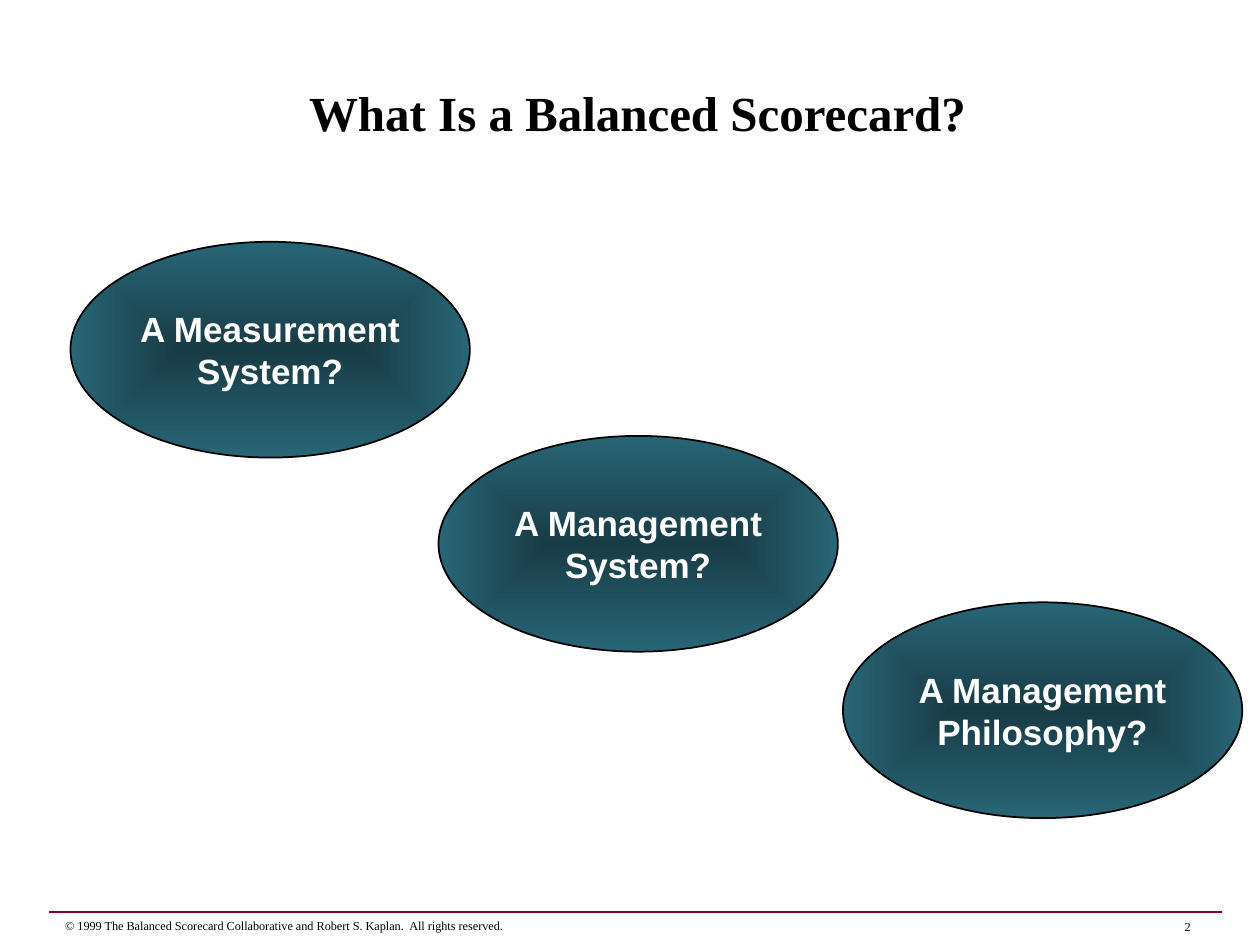
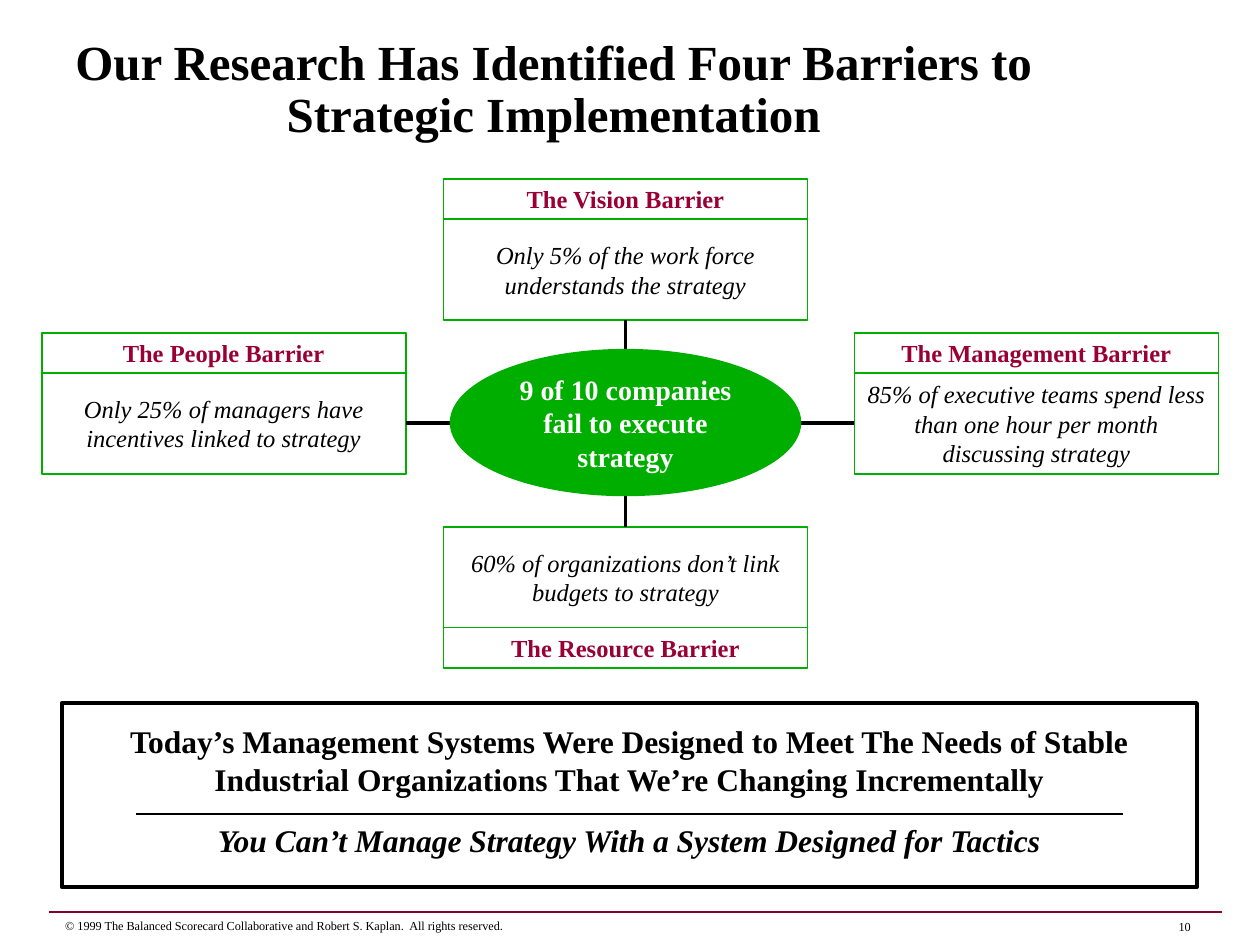
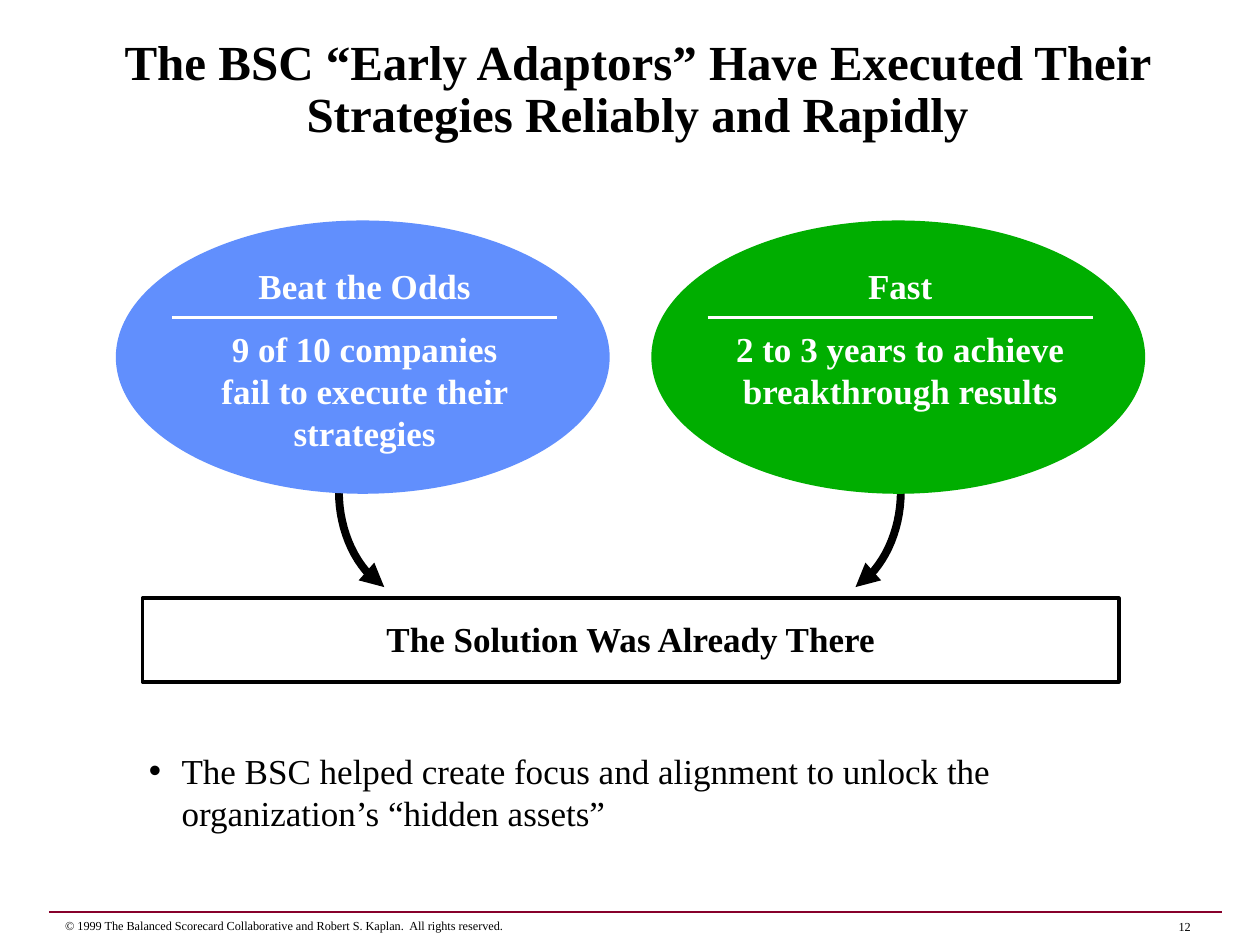
"""Build three Balanced Scorecard slides with a shared title style and footer."""
from lxml import etree
from pptx import Presentation
from pptx.dml.color import RGBColor
from pptx.enum.shapes import MSO_CONNECTOR, MSO_SHAPE
from pptx.enum.text import MSO_ANCHOR, MSO_AUTO_SIZE, PP_ALIGN
from pptx.oxml.ns import qn
from pptx.util import Pt

BLACK = RGBColor(0x00, 0x00, 0x00)
WHITE = RGBColor(0xFF, 0xFF, 0xFF)
GREEN = RGBColor(0x00, 0xAE, 0x00)
BLUE = RGBColor(0x61, 0x8F, 0xFD)
CRIMSON = RGBColor(0x99, 0x00, 0x33)
WINE = RGBColor(0x87, 0x00, 0x2B)
TEAL = RGBColor(0x28, 0x66, 0x76)
DARK_TEAL = RGBColor(0x18, 0x3C, 0x46)

SERIF, SANS = "Times New Roman", "Arial"
OVAL, RECTANGLE = MSO_SHAPE.OVAL, MSO_SHAPE.RECTANGLE
STRAIGHT = MSO_CONNECTOR.STRAIGHT
TOP, MIDDLE, BOTTOM = MSO_ANCHOR.TOP, MSO_ANCHOR.MIDDLE, MSO_ANCHOR.BOTTOM
LEFT, CENTER, RIGHT = PP_ALIGN.LEFT, PP_ALIGN.CENTER, PP_ALIGN.RIGHT
NO_FIT = MSO_AUTO_SIZE.NONE
TOP_SIDE, LEFT_SIDE, BOTTOM_SIDE, RIGHT_SIDE = range(4)
CONTENT_LAYOUT, TITLE_LAYOUT = 1, 5

COPYRIGHT = ("© 1999 The Balanced Scorecard Collaborative and Robert S. Kaplan.  "
             "All rights reserved.")
DEFAULT_INSETS = (7.2, 3.6, 7.2, 3.6)
PANEL_INSETS = (14.4, 10.8, 14.4, 10.8)

FOOTER = dict(name=SERIF, size=Pt(7), color=BLACK)
TITLE = dict(name=SERIF, size=Pt(28), bold=True, color=BLACK)
QUESTION = dict(name=SANS, size=Pt(20), bold=True, color=WHITE)
BARRIER = dict(name=SERIF, size=Pt(14), bold=True, color=CRIMSON)
FINDING = dict(name=SERIF, size=Pt(14), italic=True, color=BLACK)
HUB = dict(name=SERIF, size=Pt(16), bold=True, color=WHITE)
CONCLUSION = dict(name=SERIF, size=Pt(18), bold=True, color=BLACK)
RESULT = dict(name=SERIF, size=Pt(20), bold=True, color=WHITE)
SOLUTION = dict(name=SERIF, size=Pt(20), bold=True, color=BLACK)
BULLET = dict(name=SERIF, size=Pt(20), bold=False, color=BLACK)

QUESTIONS = [
    ("A Measurement System?", 40.3, 138.2),
    ("A Management System?", 250.6, 249.1),
    ("A Management Philosophy?", 481.7, 344.2),
]
QUESTION_SIZE = (228.2, 123.3)

FINDING_SIZE, BARRIER_HEIGHT = (208.1, 57.6), 23
BARRIERS = {
    "vision": ("The Vision Barrier",
               "Only 5% of the work force understands the strategy", 253.4, 125.3, -BARRIER_HEIGHT),
    "resource": ("The Resource Barrier",
                 "60% of organizations don’t link budgets to strategy", 253.4, 301, FINDING_SIZE[1]),
    "people": ("The People Barrier",
               "Only 25% of managers have incentives linked to strategy", 23.8, 213.1, -BARRIER_HEIGHT),
    "management": ("The Management Barrier",
                   "85% of executive teams spend less than one hour per month discussing strategy",
                   488.2, 213.1, -BARRIER_HEIGHT),
}
SPOKES = [("vision", BOTTOM_SIDE, "resource", TOP_SIDE),
          ("people", RIGHT_SIDE, "management", LEFT_SIDE)]
CONCLUSIONS = [
    ("Today’s Management Systems Were Designed to Meet The Needs of Stable "
     "Industrial Organizations That We’re Changing Incrementally", CONCLUSION),
    ("You Can’t Manage Strategy With a System Designed for Tactics",
     CONCLUSION | dict(italic=True)),
]

RESULTS = [
    ("Beat the Odds", "9 of 10 companies fail to execute their strategies", BLUE, 198),
    ("Fast", "2 to 3 years to achieve breakthrough results", GREEN, 218.2),
]
RESULT_CENTER, RESULT_STEP = 208.4, 306
ARROWS = [(193.7, 1), (514.8, -1)]
ARROW_CURVE = [(0, 280.8), (0, 303.8), (10.1, 325.4), (25.9, 335.5)]
CURVE_STEPS = 16


def points(*values):
    """Turn numbers into point lengths."""
    return [Pt(value) for value in values]


def write(shape, lines, anchor=MIDDLE, align=CENTER, insets=DEFAULT_INSETS,
          wrap=True, gap=0, spacing=None):
    """Fill a shape with formatted paragraphs."""
    frame = shape.text_frame
    frame.auto_size, frame.word_wrap, frame.vertical_anchor = NO_FIT, wrap, anchor
    for side, inset in zip(("left", "top", "right", "bottom"), insets):
        setattr(frame, f"margin_{side}", Pt(inset))
    for index, (text, style) in enumerate(lines):
        para = frame.add_paragraph() if index else frame.paragraphs[0]
        para.alignment = align
        para.space_before = Pt(gap if index else 0)
        if spacing:
            para.line_spacing = spacing
        span = para.add_run()
        span.text = text
        for key, value in style.items():
            if key == "color":
                span.font.color.rgb = value
            else:
                setattr(span.font, key, value)


def add_text(page, box, text, style, **options):
    """Add a text box with one paragraph."""
    write(page.shapes.add_textbox(*points(*box)), [(text, style)], **options)


def paint_line(shape, color, width):
    """Set the outline, or remove it when there is no colour."""
    if color is None:
        shape.line.fill.background()
    else:
        shape.line.color.rgb = color
        shape.line.width = Pt(width)


def add_box(page, kind, box, fill=None, line=None, width=1):
    """Add a flat preset shape."""
    shape = page.shapes.add_shape(kind, *points(*box))
    shape.shadow.inherit = False
    if fill is None:
        shape.fill.background()
    else:
        shape.fill.solid()
        shape.fill.fore_color.rgb = fill
    paint_line(shape, line, width)
    return shape


def add_line(page, ends, color, width):
    """Add a straight line without a shadow."""
    line = page.shapes.add_connector(STRAIGHT, *points(*ends))
    paint_line(line, color, width)
    etree.SubElement(line._element.spPr, qn("a:effectLst"))
    return line


def shade_to_center(shape, center, edge):
    """Fill a shape with a gradient that runs from its centre to its edge."""
    shape.fill.gradient()
    for stop, color in zip(shape.fill.gradient_stops, (center, edge)):
        stop.color.rgb = color
    gradient = shape._element.spPr.find(qn("a:gradFill"))
    gradient.remove(gradient.find(qn("a:lin")))
    outline = etree.SubElement(gradient, qn("a:path"), path="shape")
    etree.SubElement(outline, qn("a:fillToRect"), dict.fromkeys("ltrb", "50000"))


def add_curved_arrow(page, start, direction):
    """Add a thick curved arrow that bends towards the middle of the slide."""
    curve = []
    for step in range(CURVE_STEPS + 1):
        t = step / CURVE_STEPS
        weights = ((1 - t) ** 3, 3 * t * (1 - t) ** 2, 3 * t * t * (1 - t), t ** 3)
        across, down = (sum(weight * value for weight, value in zip(weights, axis))
                        for axis in zip(*ARROW_CURVE))
        curve.append(points(start + direction * across, down))
    builder = page.shapes.build_freeform(*curve[0])
    builder.add_line_segments(curve[1:], close=False)
    arrow = builder.convert_to_shape()
    arrow.shadow.inherit = False
    arrow.fill.background()
    paint_line(arrow, BLACK, 4.5)
    etree.SubElement(arrow.line._get_or_add_ln(), qn("a:tailEnd"), type="triangle")


def place(shape, box):
    """Move and size a placeholder."""
    for key, value in zip(("left", "top", "width", "height"), points(*box)):
        setattr(shape, key, value)


def add_page(deck, layout, title, number, title_width=675.4, spacing=0.88):
    """Add a slide with its title, footer rule, copyright and number."""
    page = deck.slides.add_slide(deck.slide_layouts[layout])
    add_line(page, (28, 521.3, 698.4, 521.3), WINE, 1)
    add_text(page, (653.8, 521.3, 33.8, 16.6), number, FOOTER, align=RIGHT,
             insets=(7.2,) * 4, wrap=False)
    add_text(page, (30.2, 521.3, 396, 15.1), COPYRIGHT, FOOTER, align=LEFT)
    place(page.shapes.title, (26.6, 6.5, title_width, 78.5))
    write(page.shapes.title, [(title, TITLE)], anchor=BOTTOM, spacing=spacing)
    return page


def build_questions(deck):
    """Build the slide with three questions."""
    page = add_page(deck, TITLE_LAYOUT, "What Is a Balanced Scorecard?", "2", spacing=0.9)
    for text, left, top in QUESTIONS:
        oval = add_box(page, OVAL, (left, top, *QUESTION_SIZE), line=BLACK)
        shade_to_center(oval, DARK_TEAL, TEAL)
        write(oval, [(text, QUESTION)], insets=(3.6,) * 4)


def build_barriers(deck):
    """Build the slide with four barriers around a hub."""
    page = add_page(deck, TITLE_LAYOUT,
                    "Our Research Has Identified Four Barriers to Strategic Implementation",
                    "10", title_width=579.6)
    panel = add_box(page, RECTANGLE, (35.3, 401.8, 648.7, 105.1), line=BLACK, width=2.25)
    write(panel, CONCLUSIONS, anchor=TOP, insets=PANEL_INSETS, gap=13.5)
    add_line(page, (77.8, 465.1, 641.5, 465.1), BLACK, 1)

    findings = {}
    for key, (name, text, left, top, offset) in BARRIERS.items():
        header = add_box(page, RECTANGLE, (left, top + offset, FINDING_SIZE[0], BARRIER_HEIGHT),
                         WHITE, GREEN)
        write(header, [(name, BARRIER)])
        findings[key] = add_box(page, RECTANGLE, (left, top, *FINDING_SIZE), WHITE, GREEN)
        write(findings[key], [(text, FINDING)])
    for start, start_side, end, end_side in SPOKES:
        spoke = add_line(page, (0, 0, 0, 0), BLACK, 2.25)
        spoke.begin_connect(findings[start], start_side)
        spoke.end_connect(findings[end], end_side)
    hub = add_box(page, OVAL, (257, 199.4, 200.9, 84.2), GREEN)
    write(hub, [("9 of 10 companies fail to execute strategy", HUB)])


def build_results(deck):
    """Build the slide with two results leading to one solution."""
    page = add_page(deck, CONTENT_LAYOUT,
                    "The BSC “Early Adaptors” Have Executed Their Strategies Reliably and Rapidly",
                    "12")
    for start, direction in ARROWS:
        add_curved_arrow(page, start, direction)
    panel = add_box(page, RECTANGLE, (81.4, 342, 558, 47.5), line=BLACK, width=2.25)
    write(panel, [("The Solution Was Already There", SOLUTION)], anchor=TOP, insets=PANEL_INSETS)

    for index, (heading, text, color, width) in enumerate(RESULTS):
        center = RESULT_CENTER + index * RESULT_STEP
        add_box(page, OVAL, (center - 142.2, 126, 282.2, 156.2), color)
        add_text(page, (center - 99, 147.6, 198, 31), heading, RESULT, anchor=TOP)
        add_text(page, (center - width / 2, 183.6, width, 79.2), text, RESULT, anchor=TOP)
        add_line(page, (center - 110, 181.4, center + 110, 181.4), WHITE, 1.5)

    body = page.placeholders[1]
    place(body, (77.8, 424.8, 558, 55.4))
    properties = body.text_frame.paragraphs[0]._p.get_or_add_pPr()
    properties.set("marL", str(Pt(18.7)))
    properties.set("indent", str(-Pt(18.7)))
    etree.SubElement(properties, qn("a:buChar"), char="•")
    write(body, [("The BSC helped create focus and alignment to unlock the "
                  "organization’s “hidden assets”", BULLET)], anchor=TOP, align=LEFT)


def main():
    """Build and save the deck."""
    deck = Presentation()
    deck.slide_width, deck.slide_height = points(720, 540)
    build_questions(deck)
    build_barriers(deck)
    build_results(deck)
    deck.save("out.pptx")


if __name__ == "__main__":
    main()
